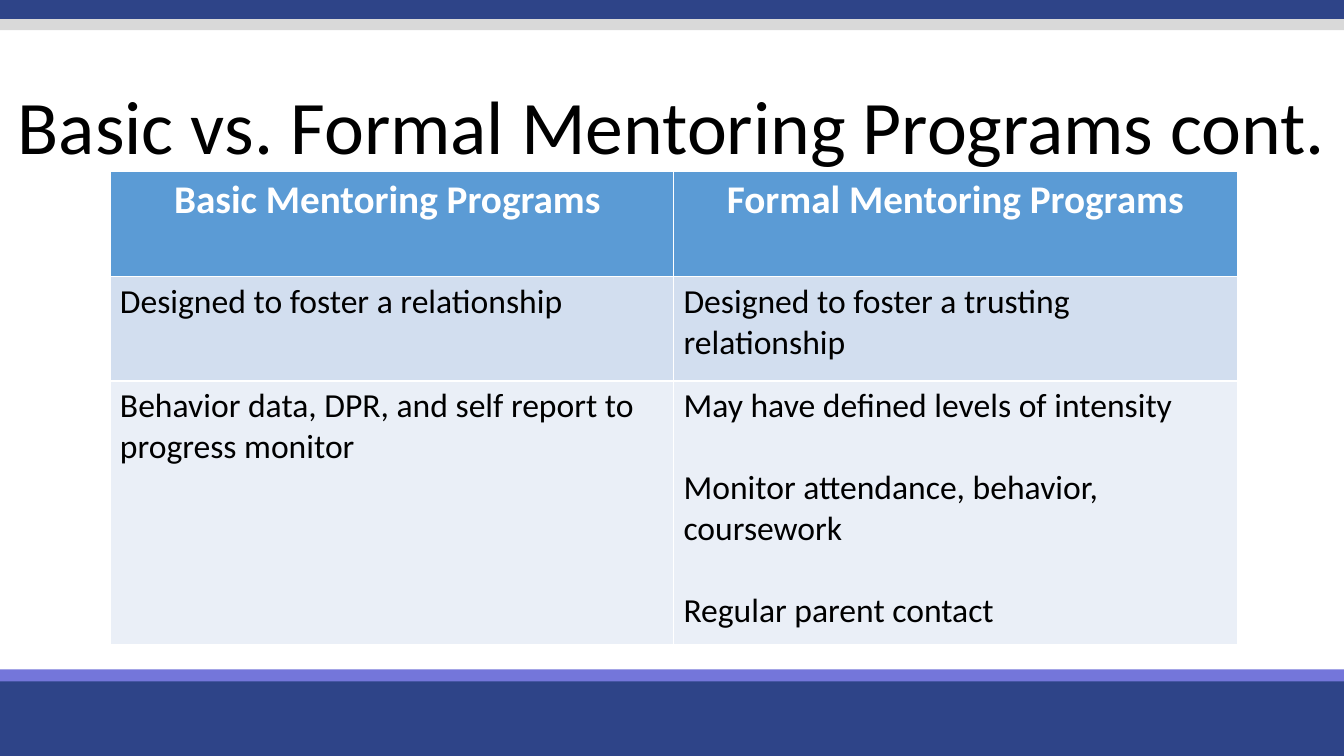
from pptx import Presentation
from pptx.dml.color import RGBColor
from pptx.enum import shapes, text
from pptx.util import Inches, Pt

TITLE = "Basic vs. Formal Mentoring Programs cont."
ROWS = [
    (["Basic Mentoring Programs "], ["Formal Mentoring Programs"]),
    (["Designed to foster a relationship"], ["Designed to foster a trusting relationship"]),
    (
        ["Behavior data, DPR, and self report to progress monitor"],
        [
            "May have defined levels of intensity",
            "Monitor attendance, behavior, coursework",
            "Regular parent contact",
        ],
    ),
]
ROW_STYLES = [(1.04, "5B9BD5"), (1.04, "D2DEEF"), (2.62, "EAEFF7")]
BANDS = [(6.7, 0.8, "2E4488"), (6.64, 0.12, "7476DA"), (-0.03, 0.22, "2E4488"), (0.19, 0.11, "D9D9D9")]
WIDTH, HEIGHT = 13.33, 7.5
TABLE_LEFT, TABLE_TOP, COLUMN_WIDTH = 1.09, 1.7, 5.59


def paint(target, color):
    target.solid()
    target.fore_color.rgb = RGBColor.from_string(color)


def add_text(para, words, size, color, bold=False):
    span = para.add_run()
    span.text = words
    span.font.name = "Calibri"
    span.font.size = Pt(size)
    span.font.bold = bold
    paint(span.font.fill, color)


def add_bands(page):
    for top, height, color in BANDS:
        band = page.shapes.add_shape(
            shapes.MSO_SHAPE.RECTANGLE, 0, Inches(top), Inches(WIDTH), Inches(height)
        )
        band.shadow.inherit = False
        paint(band.fill, color)
        band.line.fill.background()


def add_title(page):
    title = page.shapes.title
    title.left, title.top = 0, Inches(0.69)
    title.width, title.height = Inches(WIDTH), Inches(1.19)
    frame = title.text_frame
    frame.word_wrap = True
    frame.auto_size = text.MSO_AUTO_SIZE.NONE
    frame.vertical_anchor = text.MSO_ANCHOR.MIDDLE
    para = frame.paragraphs[0]
    para.alignment = text.PP_ALIGN.CENTER
    para.line_spacing = 0.9
    add_text(para, TITLE, 54, "000000")


def fill_cell(cell, lines, header):
    for index, line in enumerate(lines):
        frame = cell.text_frame
        para = frame.add_paragraph() if index else frame.paragraphs[0]
        para.alignment = text.PP_ALIGN.CENTER if header else text.PP_ALIGN.LEFT
        if index:
            para.space_before = Pt(29.3)
        add_text(para, line, 28 if header else 24, "FFFFFF" if header else "000000", header)


def add_comparison(page):
    columns = len(ROWS[0])
    table = page.shapes.add_table(
        len(ROWS), columns, Inches(TABLE_LEFT), Inches(TABLE_TOP),
        Inches(COLUMN_WIDTH * columns), Inches(sum(height for height, _ in ROW_STYLES)),
    ).table
    for column in table.columns:
        column.width = Inches(COLUMN_WIDTH)
    for row_index, (entries, (height, color)) in enumerate(zip(ROWS, ROW_STYLES)):
        table.rows[row_index].height = Inches(height)
        for column_index, lines in enumerate(entries):
            cell = table.cell(row_index, column_index)
            paint(cell.fill, color)
            fill_cell(cell, lines, row_index == 0)


def main():
    deck = Presentation()
    deck.slide_width, deck.slide_height = Inches(WIDTH), Inches(HEIGHT)
    page = deck.slides.add_slide(deck.slide_layouts[5])
    add_bands(page)
    add_title(page)
    add_comparison(page)
    deck.save("out.pptx")


if __name__ == "__main__":
    main()
